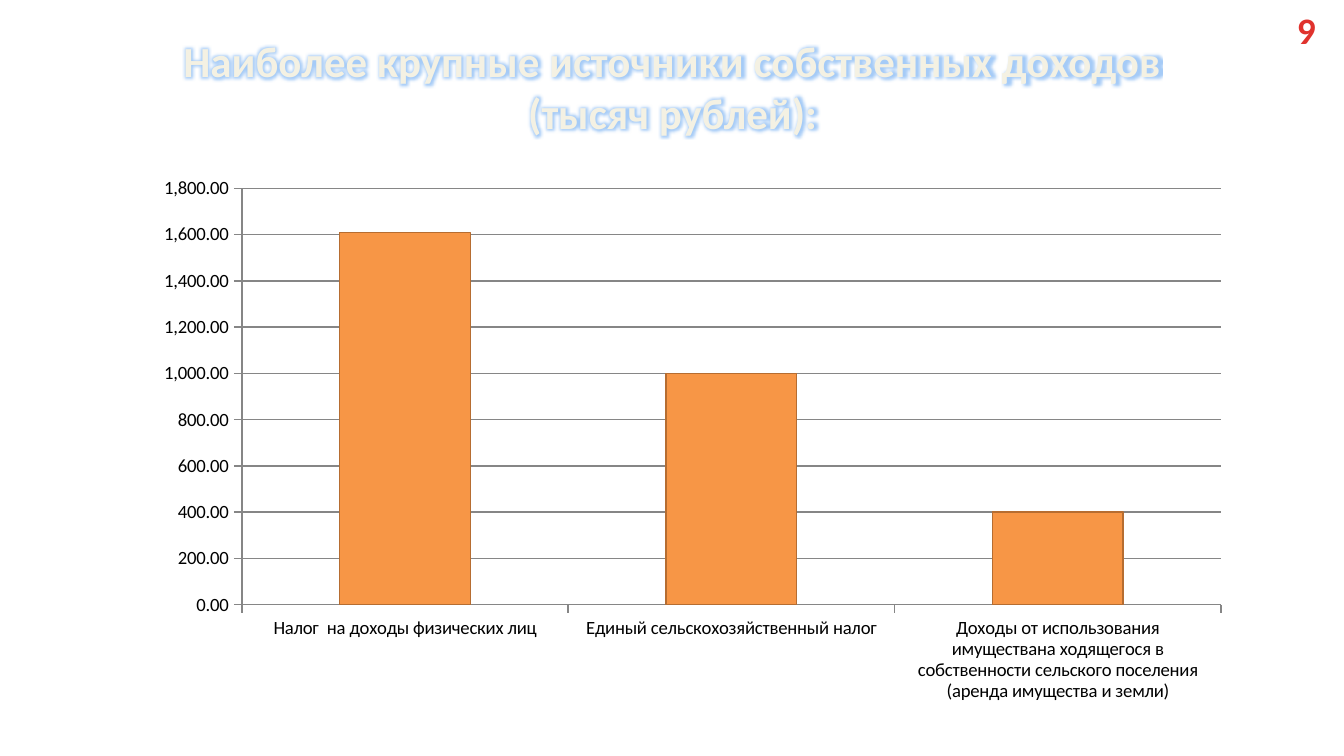
"""Build the slide on the largest sources of own revenue."""
from dataclasses import dataclass

from lxml.etree import SubElement
from pptx import Presentation
from pptx.chart.data import CategoryChartData
from pptx.dml.color import RGBColor
from pptx.enum.chart import XL_CHART_TYPE, XL_TICK_MARK
from pptx.enum.text import MSO_ANCHOR, MSO_AUTO_SIZE, PP_ALIGN
from pptx.oxml import parse_xml
from pptx.oxml.ns import nsdecls, qn
from pptx.slide import Slide
from pptx.text.text import TextFrame, _Run
from pptx.util import Emu, Pt

PX_PER_INCH = 134.4


@dataclass(frozen=True)
class Theme:
    """Colours and type sizes of the slide."""

    font: str = "Calibri"
    title: str = "F4F1E3"
    title_outline: str = "054697"
    title_glow: str = "A5CBF7"
    number_top: str = "E0322D"
    number_bottom: str = "A2201C"
    bar: str = "F79646"
    bar_edge: str = "B66D31"
    axis: str = "868686"
    label: str = "000000"
    title_size: int = 23
    number_size: int = 20
    label_size: int = 10


@dataclass(frozen=True)
class Box:
    """A rectangle in whole px."""

    left: int
    top: int
    width: int
    height: int

    def emu(self) -> tuple[Emu, Emu, Emu, Emu]:
        """Return the rectangle in EMU."""
        return px(self.left), px(self.top), px(self.width), px(self.height)


@dataclass(frozen=True)
class Revenue:
    """One revenue source in thousand roubles."""

    source: str
    amount: int


THEME = Theme()
TITLE_BOX = Box(38, 28, 1270, 118)
CHART_BOX = Box(142, 167, 1101, 546)
NUMBER_BOX = Box(1283, 1, 47, 59)
TITLE_LINES = ("Наиболее крупные источники собственных доходов", "(тысяч рублей):")
REVENUES = (
    Revenue("Налог  на доходы физических лиц", 1610),
    Revenue("Единый сельскохозяйственный налог", 1000),
    Revenue(
        "Доходы от использования имуществана ходящегося в собственности "
        "сельского поселения (аренда имущества и земли)",
        400,
    ),
)


def px(length: int) -> Emu:
    """Turn px into EMU."""
    return Emu(round(length * 914400 / PX_PER_INCH))


def rgb(code: str) -> RGBColor:
    """Turn a hex code into a colour."""
    return RGBColor.from_string(code)


def write_lines(frame: TextFrame, lines: tuple[str, ...], size: int) -> list[_Run]:
    """Write centred bold lines, one paragraph each, and return their runs."""
    runs = []
    for index, line in enumerate(lines):
        paragraph = frame.paragraphs[0] if index == 0 else frame.add_paragraph()
        paragraph.alignment = PP_ALIGN.CENTER
        run = paragraph.add_run()
        run.text = line
        run.font.name = THEME.font
        run.font.size = Pt(size)
        run.font.bold = True
        runs.append(run)
    frame.vertical_anchor = MSO_ANCHOR.TOP
    frame.auto_size = MSO_AUTO_SIZE.SHAPE_TO_FIT_TEXT
    return runs


def add_glow(run: _Run) -> None:
    """Give a run a thin outline and a soft glow."""
    properties = run.font._element
    properties.insert(0, parse_xml(
        f'<a:ln {nsdecls("a")} w="12700"><a:solidFill>'
        f'<a:srgbClr val="{THEME.title_outline}"/></a:solidFill></a:ln>'
    ))
    properties.find(qn("a:solidFill")).addnext(parse_xml(
        f'<a:effectLst {nsdecls("a")}><a:glow rad="63500">'
        f'<a:srgbClr val="{THEME.title_glow}"/></a:glow></a:effectLst>'
    ))


def draw_title(slide: Slide) -> None:
    """Place and format the title placeholder."""
    title = slide.shapes.title
    title.left, title.top, title.width, title.height = TITLE_BOX.emu()
    title.text_frame.word_wrap = True
    for run in write_lines(title.text_frame, TITLE_LINES, THEME.title_size):
        run.font.color.rgb = rgb(THEME.title)
        add_glow(run)


def draw_chart(slide: Slide) -> None:
    """Draw the revenue columns."""
    data = CategoryChartData(number_format="#,##0.00")
    data.categories = [revenue.source for revenue in REVENUES]
    data.add_series("Series 1", [revenue.amount for revenue in REVENUES])
    chart = slide.shapes.add_chart(
        XL_CHART_TYPE.COLUMN_STACKED, *CHART_BOX.emu(), data
    ).chart
    chart.has_legend = False
    chart.has_title = False
    chart.font.name = THEME.font
    chart.font.size = Pt(THEME.label_size)
    chart.font.color.rgb = rgb(THEME.label)

    columns = chart.plots[0]
    columns.gap_width = 150
    columns.overlap = 100
    columns.vary_by_categories = False
    bars = columns.series[0].format
    bars.fill.solid()
    bars.fill.fore_color.rgb = rgb(THEME.bar)
    bars.line.color.rgb = rgb(THEME.bar_edge)
    bars.line.width = Pt(0.75)

    amounts = chart.value_axis
    amounts.minimum_scale, amounts.maximum_scale, amounts.major_unit = 0, 1800, 200
    amounts.has_major_gridlines = True
    amounts.tick_labels.number_format = "#,##0.00"
    amounts.tick_labels.number_format_is_linked = False
    for axis in (chart.category_axis, amounts):
        axis.major_tick_mark = XL_TICK_MARK.OUTSIDE
        axis.minor_tick_mark = XL_TICK_MARK.NONE
    for part in (chart.category_axis, amounts, amounts.major_gridlines):
        part.format.line.color.rgb = rgb(THEME.axis)
        part.format.line.width = Pt(0.75)


def draw_number(slide: Slide) -> None:
    """Write the page number with a vertical gradient."""
    frame = slide.shapes.add_textbox(*NUMBER_BOX.emu()).text_frame
    frame.word_wrap = False
    (number,) = write_lines(frame, ("9",), THEME.number_size)
    number.font._element.set("spc", "50")
    fill = number.font.fill
    fill.gradient()
    fill.gradient_angle = 270
    shades = ((0.25, THEME.number_top), (1.0, THEME.number_bottom))
    for stop, (position, shade) in zip(fill.gradient_stops, shades):
        stop.position = position
        stop.color.rgb = rgb(shade)


def main() -> None:
    """Build and save the presentation."""
    presentation = Presentation()
    presentation.slide_width = px(1344)
    presentation.slide_height = px(756)
    slide = presentation.slides.add_slide(presentation.slide_layouts[5])
    draw_title(slide)
    draw_chart(slide)
    draw_number(slide)
    presentation.save("out.pptx")


if __name__ == "__main__":
    main()
